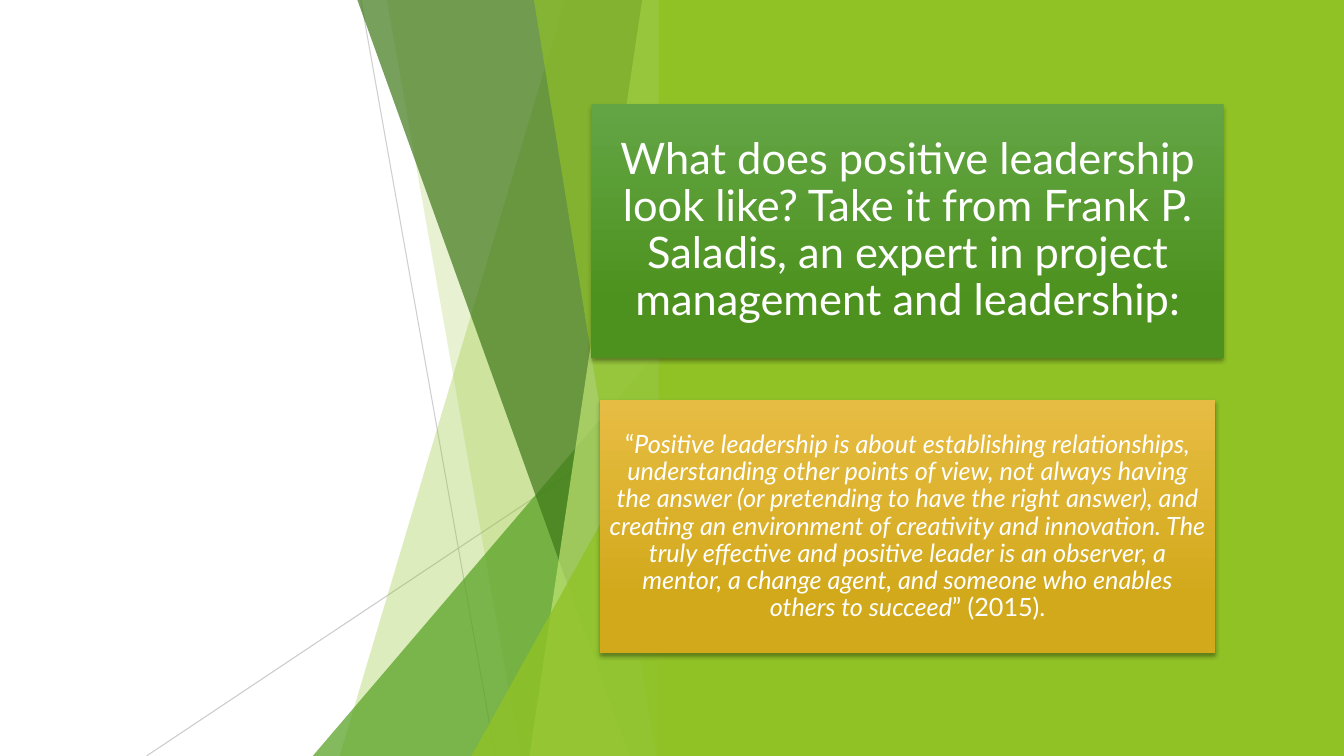
"""Build a leadership quote slide with a faceted green backdrop and two cards."""
from lxml import etree
from pptx import Presentation
from pptx.dml.color import RGBColor
from pptx.enum.shapes import MSO_CONNECTOR, MSO_SHAPE
from pptx.enum.text import MSO_ANCHOR, MSO_AUTO_SIZE, PP_ALIGN
from pptx.oxml.ns import qn
from pptx.util import Pt

STRAIGHT = MSO_CONNECTOR.STRAIGHT
TRIANGLE, RECTANGLE = MSO_SHAPE.ISOSCELES_TRIANGLE, MSO_SHAPE.RECTANGLE
MIDDLE, NO_FIT, CENTER = MSO_ANCHOR.MIDDLE, MSO_AUTO_SIZE.NONE, PP_ALIGN.CENTER

SLIDE_W, SLIDE_H = 960, 540
FACET_RIGHT, FACET_TOP = 479.6, -0.67
PANEL_LEFT = 470.7
LIME, GREEN, FOREST, PALE = "90C226", "54A021", "3F7819", "C0E474"

HEADING = [
    ("What does positive leadership look like? Take it from Frank P. Saladis, "
     "an expert in project management and leadership:", False),
]
QUOTE = [
    ("“", False),
    ("Positive leadership is about establishing relationships, understanding "
     "other points of view, not always having the answer (or pretending to have "
     "the right answer), and creating an environment of creativity and "
     "innovation. The truly effective and positive leader is an observer, a "
     "mentor, a change agent, and someone who enables others to succeed", True),
    ("” (2015).", False),
]
CARDS = [
    {"box": (422.4, 74.6, 451.6, 180.8), "runs": HEADING, "size": 31,
     "inset": 9.3, "shades": ("63A545", "4D921E")},
    {"box": (428.6, 286, 439.4, 180.8), "runs": QUOTE, "size": 18,
     "inset": 5.4, "shades": ("E7BC43", "D2A91B")},
]
RAYS = [
    ((257.8, 0), (353.8, 540), 75),
    ((479.6, 290.2), (104.6, 540), 80),
]
FACETS = [
    ("band", 403.8, 242.6, LIME, 30),
    ("band", 276.2, 371.8, LIME, 20),
    ("peak", 240, 223.4, GREEN, 72),
    ("band", 255, 449.5, FOREST, 70),
    ("band", 458.8, 378.2, PALE, 70),
    ("band", 381.3, 468.8, LIME, 65),
    ("peak", 282.8, 336.7, LIME, 80),
]


def color(hex_code):
    return RGBColor.from_string(hex_code)


def apply(target, formats):
    for key, value in formats.items():
        setattr(target, key, value)


def set_alpha(shape, percent):
    rgb = next(shape._element.spPr.iter(qn("a:srgbClr")))
    etree.SubElement(rgb, qn("a:alpha"), val=str(percent * 1000))


def paint(shape, hex_code):
    shape.shadow.inherit = False
    shape.fill.solid()
    shape.fill.fore_color.rgb = color(hex_code)
    shape.line.fill.background()


def add_ray(shapes, start, end, percent):
    ray = shapes.add_connector(STRAIGHT, *map(Pt, start + end))
    ray.line.width = Pt(0.75)
    ray.line.color.rgb = color("BFBFBF")
    set_alpha(ray, percent)
    etree.SubElement(ray._element.spPr, qn("a:effectLst"))


def add_facet(shapes, kind, top, bottom_left, hex_code, percent):
    if kind == "band":
        outline = shapes.build_freeform(Pt(top), Pt(FACET_TOP))
        corners = [(FACET_RIGHT, FACET_TOP), (FACET_RIGHT, SLIDE_H), (bottom_left, SLIDE_H)]
        outline.add_line_segments([(Pt(x), Pt(y)) for x, y in corners])
        facet = outline.convert_to_shape()
    else:
        facet = shapes.add_shape(TRIANGLE, Pt(bottom_left), Pt(top),
                                 Pt(FACET_RIGHT - bottom_left), Pt(SLIDE_H - top))
        facet.adjustments[0] = 1
    paint(facet, hex_code)
    set_alpha(facet, percent)


def add_card_shadow(card):
    effects = etree.SubElement(card._element.spPr, qn("a:effectLst"))
    shadow = etree.SubElement(effects, qn("a:outerShdw"), blurRad=str(Pt(3)),
                              dist=str(Pt(2)), dir="5400000", rotWithShape="0")
    black = etree.SubElement(shadow, qn("a:srgbClr"), val="000000")
    etree.SubElement(black, qn("a:alpha"), val="35000")


def fill_card(card, box, runs, size, inset, shades):
    apply(card, dict(zip(("left", "top", "width", "height"), map(Pt, box))))
    card.fill.gradient()
    card.fill.gradient_angle = 270
    for stop, position, shade in zip(card.fill.gradient_stops, (0, 0.78), shades):
        apply(stop, {"position": position})
        stop.color.rgb = color(shade)
    add_card_shadow(card)

    frame = card.text_frame
    apply(frame, {"word_wrap": True, "auto_size": NO_FIT, "vertical_anchor": MIDDLE})
    apply(frame, {f"margin_{side}": Pt(inset) for side in ("left", "top", "right", "bottom")})
    paragraph = frame.paragraphs[0]
    apply(paragraph, {"alignment": CENTER, "line_spacing": 0.9,
                      "space_before": Pt(0), "space_after": Pt(0)})
    properties = paragraph._p.get_or_add_pPr()
    properties.set("marL", "0")
    properties.set("indent", "0")
    etree.SubElement(properties, qn("a:buNone"))
    for words, italic in runs:
        run = paragraph.add_run()
        run.text = words
        apply(run.font, {"name": "Lato", "size": Pt(size), "italic": italic, "bold": False})
        run.font.color.rgb = color("FFFFFF")


def main():
    deck = Presentation()
    apply(deck, {"slide_width": Pt(SLIDE_W), "slide_height": Pt(SLIDE_H)})
    slide = deck.slides.add_slide(deck.slide_layouts[1])
    shapes = slide.shapes
    cards = list(slide.placeholders)
    for ray in RAYS:
        add_ray(shapes, *ray)
    for facet in FACETS:
        add_facet(shapes, *facet)
    panel = shapes.add_shape(RECTANGLE, Pt(PANEL_LEFT), 0,
                             Pt(SLIDE_W - PANEL_LEFT), Pt(SLIDE_H))
    paint(panel, LIME)
    for card, content in zip(cards, CARDS):
        fill_card(card, **content)
        shapes._spTree.append(card._element)
    deck.save("out.pptx")


if __name__ == "__main__":
    main()
